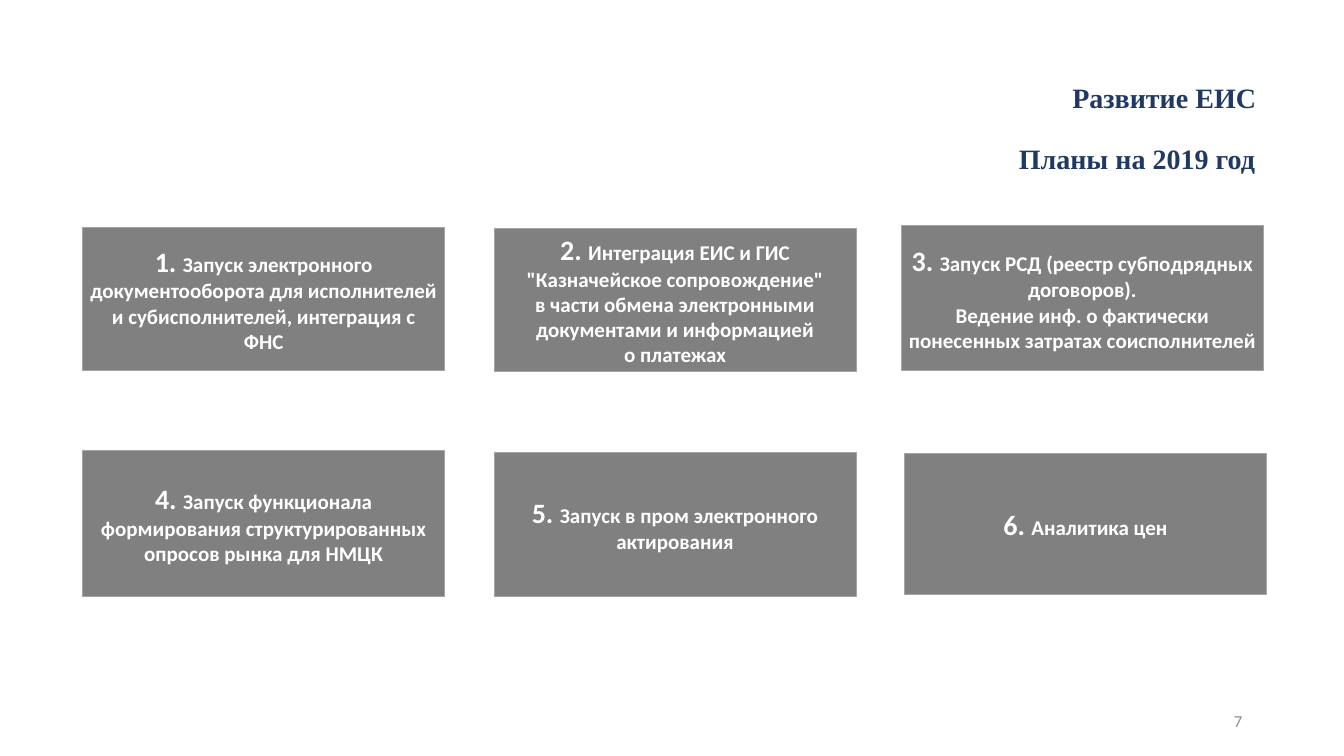
from pptx import Presentation
from pptx.dml.color import RGBColor
from pptx.enum.shapes import MSO_SHAPE
from pptx.enum.text import MSO_ANCHOR, PP_ALIGN
from pptx.util import Inches, Pt

RECTANGLE = MSO_SHAPE.RECTANGLE
TOP, MIDDLE = MSO_ANCHOR.TOP, MSO_ANCHOR.MIDDLE
CENTER, RIGHT = PP_ALIGN.CENTER, PP_ALIGN.RIGHT

NAVY = RGBColor(0x20, 0x38, 0x64)
GRAY = RGBColor(0x80, 0x80, 0x80)
BORDER = RGBColor(0xA5, 0xA5, 0xA5)
PAGE_GRAY = RGBColor(0x8C, 0x8C, 0x8C)
WHITE = RGBColor(0xFF, 0xFF, 0xFF)

HEADINGS = [
    ("Развитие ЕИС", 6.22, 0.77, 6.31),
    ("Планы на 2019 год", 4.02, 1.37, 8.5),
]
PLAN_WIDTH = 3.59
PLANS = [
    (0.82, 2.26, 1.41, [["Запуск электронного документооборота для исполнителей "
                         "и субисполнителей, интеграция с ФНС"]]),
    (4.9, 2.27, 1.41, [["Интеграция ЕИС и ГИС \"Казначейское сопровождение\"",
                        "в части обмена электронными документами и информацией",
                        "о платежах"]]),
    (8.94, 2.24, 1.43, [["Запуск РСД (реестр субподрядных договоров)."],
                        ["Ведение инф. о фактически понесенных затратах соисполнителей"]]),
    (0.82, 4.47, 1.45, [["Запуск функционала формирования структурированных "
                         "опросов рынка для НМЦК"]]),
    (4.9, 4.49, 1.43, [["Запуск в пром электронного актирования"]]),
    (8.97, 4.5, 1.4, [["Аналитика цен"]]),
]
PAGE_NUMBER = "7"


def set_frame(frame, anchor, side=0.07, edge=0.03):
    frame.word_wrap = True
    frame.vertical_anchor = anchor
    frame.margin_left = frame.margin_right = Inches(side)
    frame.margin_top = frame.margin_bottom = Inches(edge)


def add_words(paragraph, words, size, color, bold=True, face="Calibri"):
    run = paragraph.add_run()
    run.text = words
    run.font.name = face
    run.font.size = Pt(size)
    run.font.bold = bold
    run.font.color.rgb = color


def add_label(slide, box):
    return slide.shapes.add_textbox(*map(Inches, box)).text_frame


def add_plan(slide, number, left, top, height, paragraphs):
    plan = slide.shapes.add_shape(RECTANGLE, Inches(left), Inches(top),
                                  Inches(PLAN_WIDTH), Inches(height))
    plan.shadow.inherit = False
    plan.fill.solid()
    plan.fill.fore_color.rgb = GRAY
    plan.line.color.rgb = BORDER
    plan.line.width = Pt(0.5)
    frame = plan.text_frame
    set_frame(frame, MIDDLE)
    for index, lines in enumerate(paragraphs):
        paragraph = frame.add_paragraph() if index else frame.paragraphs[0]
        paragraph.alignment = CENTER
        if index == 0:
            add_words(paragraph, f"{number}. ", 20, WHITE)
        for position, line in enumerate(lines):
            if position:
                paragraph.add_line_break()
            add_words(paragraph, line, 15, WHITE)


def main():
    deck = Presentation()
    deck.slide_width, deck.slide_height = Inches(13.33), Inches(7.5)
    slide = deck.slides.add_slide(deck.slide_layouts[6])

    for words, left, top, width in HEADINGS:
        frame = add_label(slide, (left, top, width, 0.4))
        set_frame(frame, TOP)
        frame.paragraphs[0].alignment = RIGHT
        add_words(frame.paragraphs[0], words, 20, NAVY, face="Times New Roman")

    for number, plan in enumerate(PLANS, 1):
        add_plan(slide, number, *plan)

    footer = add_label(slide, (9.42, 6.95, 3, 0.4))
    set_frame(footer, MIDDLE, 0.1, 0.05)
    footer.paragraphs[0].alignment = RIGHT
    add_words(footer.paragraphs[0], PAGE_NUMBER, 12, PAGE_GRAY, bold=False)

    deck.save("out.pptx")


if __name__ == "__main__":
    main()
